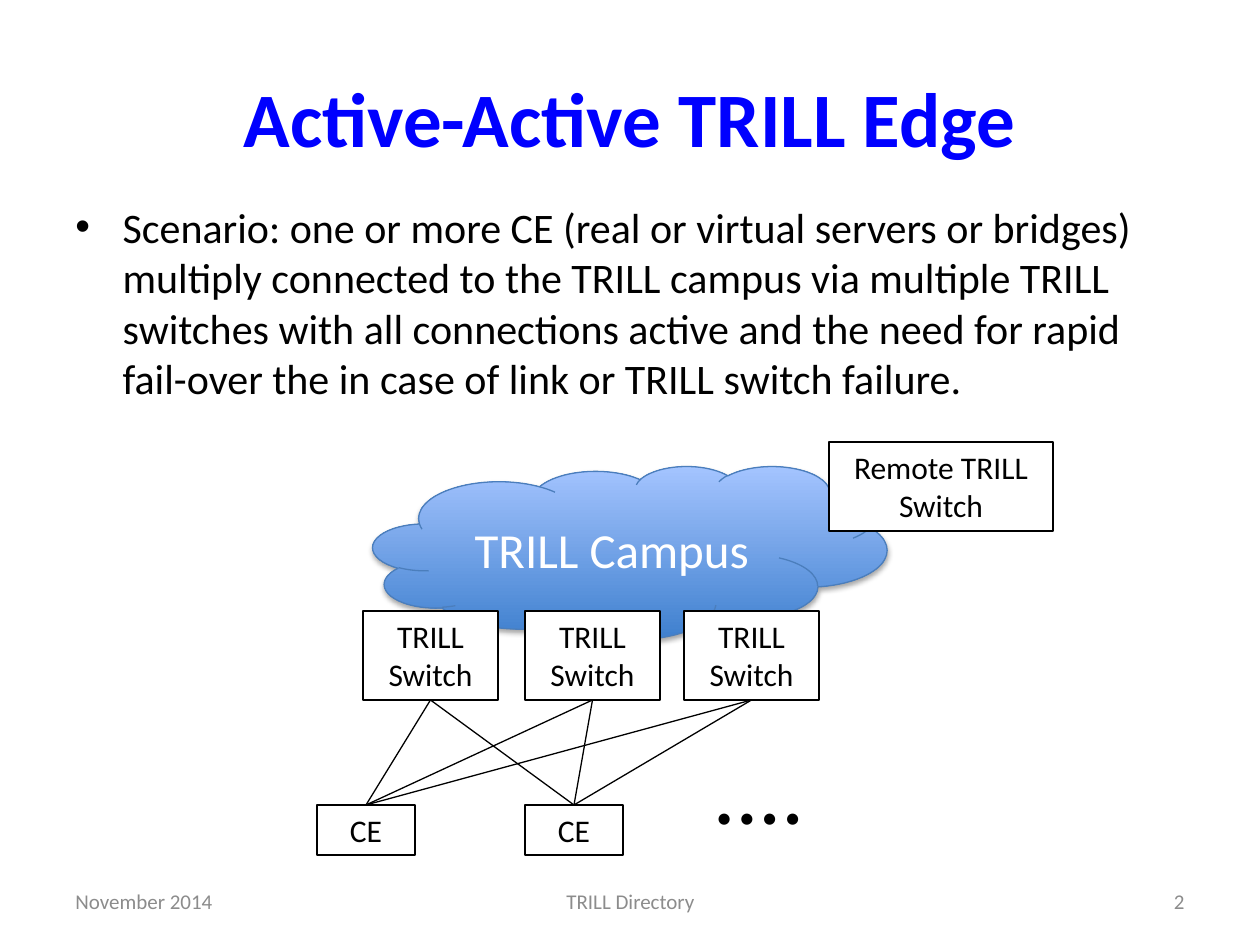
import pptx
import pptx.util
import pptx.dml.color
import pptx.enum.shapes
import pptx.enum.text
import pptx.oxml
import pptx.oxml.ns

PX = 914400 / 126
HUES = {"title": "0000FF", "ink": "000000", "paper": "FFFFFF", "foot": "8C8C8C",
        "deep": "3F80CE", "pale": "A4C4FF", "edge": "4B7EBC"}
RGB = {name: pptx.dml.color.RGBColor.from_string(code) for name, code in HUES.items()}
FORM = pptx.enum.shapes.MSO_SHAPE
SIDE = pptx.enum.text.PP_ALIGN
MID = pptx.enum.text.MSO_ANCHOR.MIDDLE
TOP = pptx.enum.text.MSO_ANCHOR.TOP
GROW = pptx.enum.text.MSO_AUTO_SIZE.SHAPE_TO_FIT_TEXT
NS = pptx.oxml.ns.nsdecls("a")

deck = pptx.Presentation()
deck.slide_width = pptx.util.Inches(10)
deck.slide_height = pptx.util.Inches(7.5)
slide = deck.slides.add_slide(deck.slide_layouts[5])
shapes = slide.shapes


def place(*nums):
    return [round(n * PX) for n in nums]


def write(shape, text, size, hue, side, anchor=TOP, bold=False):
    frame = shape.text_frame
    frame.word_wrap = True
    frame.vertical_anchor = anchor
    frame.text = text
    par = frame.paragraphs[0]
    par.alignment = side
    font = par.runs[0].font
    font.name = "Calibri"
    font.size = pptx.util.Pt(size)
    font.bold = bold
    font.color.rgb = RGB[hue]
    return par


title = shapes.title
title.left, title.top, title.width, title.height = place(63, 38, 1134, 157)
write(title, "Active-Active TRILL Edge", 44, "title", SIDE.CENTER, MID, True)

body = shapes.add_textbox(*place(63, 195, 1134, 271))
par = write(body, "Scenario: one or more CE (real or virtual servers or bridges) "
            "multiply connected to the TRILL campus via multiple TRILL switches "
            "with all connections active and the need for rapid fail-over the "
            "in case of link or TRILL switch failure.", 24, "ink", SIDE.LEFT)
par.space_before = pptx.util.Pt(5)
props = par._p.get_or_add_pPr()
props.set("marL", "342900")
props.set("indent", "-342900")
props.append(pptx.oxml.parse_xml(f'<a:buFont {NS} typeface="Arial"/>'))
props.append(pptx.oxml.parse_xml(f'<a:buChar {NS} char="•"/>'))

for left, width, text, side in [(63, 294, "November 2014", SIDE.LEFT),
                                (431, 399, "TRILL Directory", SIDE.CENTER),
                                (903, 294, "2", SIDE.RIGHT)]:
    foot = shapes.add_textbox(*place(left, 876, width, 50))
    write(foot, text, 12, "foot", side, MID)

cloud = shapes.add_shape(FORM.CLOUD, *place(373, 466, 514, 173))
cloud.fill.gradient()
cloud.fill.gradient_angle = 90
for stop, hue in zip(cloud.fill.gradient_stops, ["deep", "pale"]):
    stop.color.rgb = RGB[hue]
cloud.line.color.rgb = RGB["edge"]
cloud.line.width = pptx.util.Pt(0.75)
cloud.shadow.inherit = False
glow = cloud._element.spPr.find(pptx.oxml.ns.qn("a:effectLst"))
glow.append(pptx.oxml.parse_xml(
    f'<a:outerShdw {NS} blurRad="40000" dist="23000" dir="5400000" rotWithShape="0">'
    '<a:srgbClr val="000000"><a:alpha val="35000"/></a:srgbClr></a:outerShdw>'))
write(cloud, "TRILL Campus", 28, "paper", SIDE.CENTER, MID)

boxes = [(x, 611, 135, 89, "TRILL Switch") for x in (363, 525, 684)]
boxes += [(829, 442, 224, 89, "Remote TRILL Switch")]
boxes += [(x, 805, 98, 50, "CE") for x in (317, 525)]
nodes = []
for *spot, text in boxes:
    box = shapes.add_shape(FORM.RECTANGLE, *place(*spot))
    box.shadow.inherit = False
    box.fill.solid()
    box.fill.fore_color.rgb = RGB["paper"]
    box.line.color.rgb = RGB["ink"]
    box.line.width = pptx.util.Pt(1.5)
    write(box, text, 18, "ink", SIDE.CENTER)
    box.text_frame.auto_size = GROW
    nodes.append(box)

dots = shapes.add_textbox(*place(704, 791, 198, 50))
write(dots, "• • • •", 18, "ink", SIDE.LEFT)

for end in nodes[4:]:
    for hub in nodes[:3]:
        link = shapes.add_connector(pptx.enum.shapes.MSO_CONNECTOR.STRAIGHT, 0, 0, 0, 0)
        link.begin_connect(hub, 2)
        link.end_connect(end, 0)
        link.line.color.rgb = RGB["ink"]
        link.line.width = pptx.util.Pt(0.75)
        link._element.spPr.append(pptx.oxml.parse_xml(f"<a:effectLst {NS}/>"))

deck.save("out.pptx")
